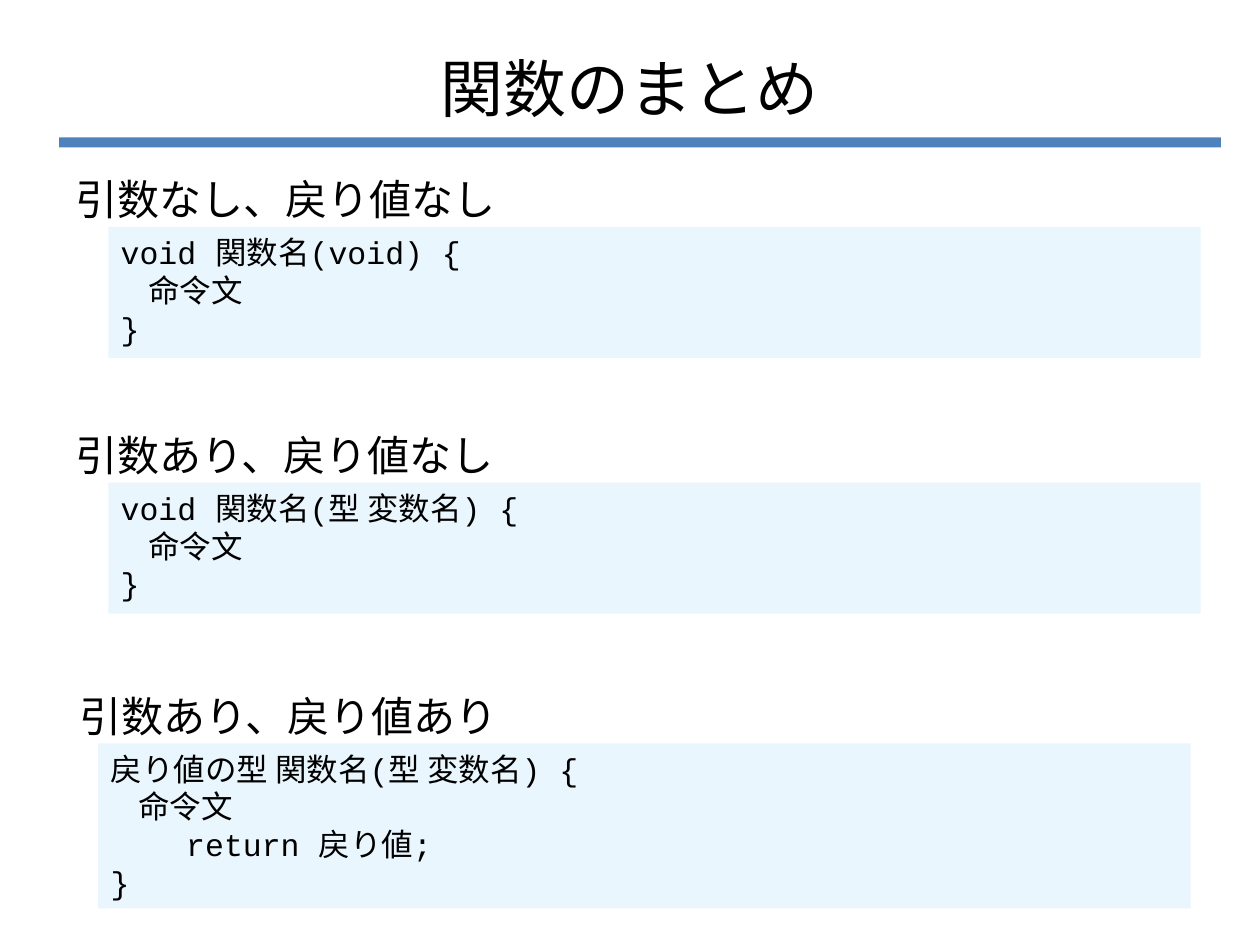
from dataclasses import dataclass

from pptx import Presentation
from pptx.dml.color import RGBColor
from pptx.enum.shapes import MSO_SHAPE
from pptx.enum.text import MSO_ANCHOR, MSO_AUTO_SIZE, PP_ALIGN
from pptx.oxml.ns import qn
from pptx.util import Inches, Pt


@dataclass(frozen=True)
class Theme:
    ink: str = "000000"
    rule: str = "4F81BD"
    panel: str = "EAF6FD"
    title_font: str = "Arial"
    heading_font: str = "Noto Sans CJK JP"
    code_font: str = "Courier New"
    title_size: int = 36
    heading_size: int = 24
    code_size: int = 18


class SlideBuilder:
    COLUMNS, ROWS = 100, 75

    def __init__(self, deck, theme):
        self.theme = theme
        self.slide = deck.slides.add_slide(deck.slide_layouts[6])
        self.column = deck.slide_width / self.COLUMNS
        self.row = deck.slide_height / self.ROWS

    def area(self, left, top, width, height):
        return (round(left * self.column), round(top * self.row),
                round(width * self.column), round(height * self.row))

    def style(self, paragraph, font_name, size):
        font = paragraph.font
        font.name, font.size = font_name, Pt(size)
        font.color.rgb = RGBColor.from_string(self.theme.ink)
        properties = paragraph._p.pPr.find(qn("a:defRPr"))
        east_asian = properties.makeelement(
            qn("a:ea"), {"typeface": self.theme.heading_font})
        properties.find(qn("a:latin")).addnext(east_asian)

    def label(self, words, area, font_name, size):
        frame = self.slide.shapes.add_textbox(*self.area(*area)).text_frame
        frame.word_wrap = True
        paragraph = frame.paragraphs[0]
        paragraph.text = words
        self.style(paragraph, font_name, size)
        return frame

    def title(self, words, area):
        frame = self.label(words, area, self.theme.title_font, self.theme.title_size)
        frame.vertical_anchor = MSO_ANCHOR.MIDDLE
        frame.paragraphs[0].alignment = PP_ALIGN.CENTER

    def heading(self, words, area):
        size = self.theme.heading_size
        frame = self.label(words, area, self.theme.heading_font, size)
        frame.paragraphs[0].space_before = Pt(size * 0.2)

    def bar(self, area, color):
        bar = self.slide.shapes.add_shape(MSO_SHAPE.RECTANGLE, *self.area(*area))
        bar.shadow.inherit = False
        bar.fill.solid()
        bar.fill.fore_color.rgb = RGBColor.from_string(color)
        bar.line.fill.background()
        return bar

    def code(self, lines, area):
        frame = self.bar(area, self.theme.panel).text_frame
        frame.word_wrap = True
        frame.vertical_anchor = MSO_ANCHOR.TOP
        frame.auto_size = MSO_AUTO_SIZE.SHAPE_TO_FIT_TEXT
        for number, (words, indent) in enumerate(lines):
            paragraph = frame.add_paragraph() if number else frame.paragraphs[0]
            paragraph.text = words
            paragraph.alignment = PP_ALIGN.LEFT
            self.style(paragraph, self.theme.code_font, self.theme.code_size)
            paragraph._p.pPr.set("marL", str(Inches(indent)))


def main():
    deck = Presentation()
    deck.slide_width, deck.slide_height = Inches(10), Inches(7.5)
    theme = Theme()
    page = SlideBuilder(deck, theme)

    page.bar((4.7, 10.9, 92.2, 0.8), theme.rule)
    page.title("関数のまとめ", (5, 3, 90, 7.9))

    statement, closing = ("命令文", 0.22), ("}", 0)
    sections = [
        ("引数なし、戻り値なし", 5, 8.6, 13.3,
         [("void 関数名(void) {", 0), statement, closing]),
        ("引数あり、戻り値なし", 5, 8.6, 33.6,
         [("void 関数名(型 変数名) {", 0), statement, closing]),
        ("引数あり、戻り値あり", 5.3, 7.8, 54.3,
         [("戻り値の型 関数名(型 変数名) {", 0), statement,
          ("return 戻り値;", 0.6), closing]),
    ]
    heading_height, line_height, padding = 4.7, 2.7, 2.3
    for heading, heading_left, code_left, top, lines in sections:
        page.heading(heading, (heading_left, top, 90, heading_height))
        page.code(lines, (code_left, top + heading_height, 86.7,
                          padding + line_height * len(lines)))

    deck.save("out.pptx")


if __name__ == "__main__":
    main()
